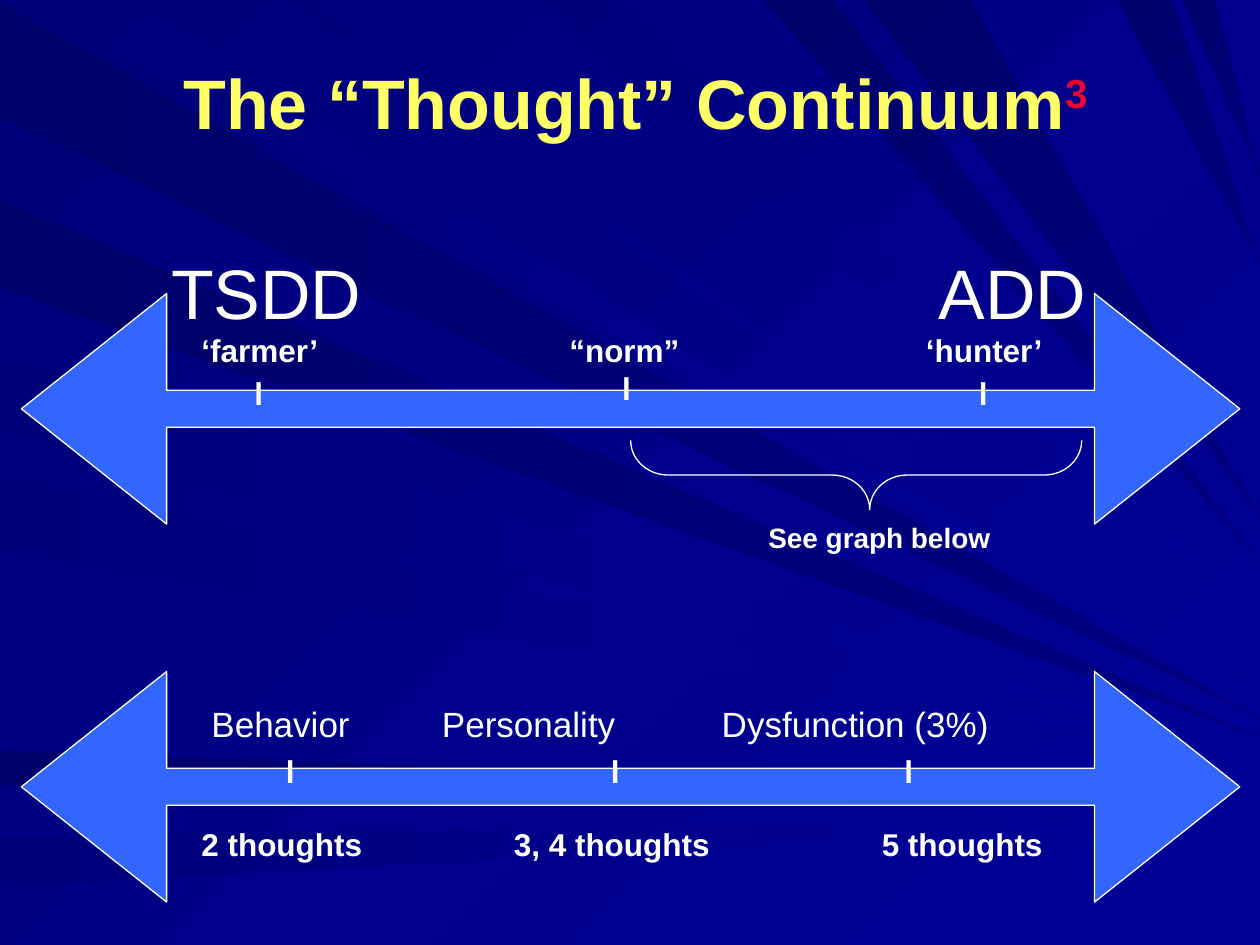
import pptx
import pptx.dml.color
import pptx.enum.shapes
import pptx.enum.text
import pptx.util

Inches = pptx.util.Inches
Pt = pptx.util.Pt
RGBColor = pptx.dml.color.RGBColor
MSO_SHAPE = pptx.enum.shapes.MSO_SHAPE
PP_ALIGN = pptx.enum.text.PP_ALIGN

WHITE = RGBColor(0xFF, 0xFF, 0xFF)
YELLOW = RGBColor(0xFF, 0xFF, 0x66)
RED = RGBColor(0xEB, 0x05, 0x31)
ARROW_BLUE = RGBColor(0x33, 0x66, 0xFF)
NAVY = RGBColor(0x00, 0x00, 0x78)
BLUE = RGBColor(0x00, 0x00, 0x99)
DARK_RAY = (RGBColor(0x00, 0x00, 0x6B), RGBColor(0x00, 0x00, 0x80))
LIGHT_RAY = (RGBColor(0x00, 0x00, 0x7B), BLUE)

LEFT_RAYS = [
    (0.02, 0.93, 5.7, DARK_RAY),
    (1.59, 2.28, 5.85, DARK_RAY),
    (2.8, 3.45, 6.03, LIGHT_RAY),
    (3.74, 4.37, 6.06, LIGHT_RAY),
    (5.96, 6.23, 6.32, DARK_RAY),
    (6.65, 7.04, 6.47, LIGHT_RAY),
]
TOP_RAYS = [
    (0.26, 1.01, 5.63, LIGHT_RAY),
    (2.25, 2.47, 5.5, LIGHT_RAY),
    (4.26, 4.92, 4.93, LIGHT_RAY),
    (6.06, 6.61, 4.46, DARK_RAY),
    (6.86, 7.7, 4.1, DARK_RAY),
    (8.87, 9.3, 2.1, DARK_RAY),
    (9.39, 9.64, 1.4, DARK_RAY),
]


class ContinuumSlide:
    font = "Arial"
    outline = Pt(0.75)

    def __init__(self, presentation):
        self.slide = presentation.slides.add_slide(presentation.slide_layouts[6])
        self.shapes = self.slide.shapes
        self.right_edge = presentation.slide_width

    def gradient(self, fill, colors, angle):
        fill.gradient()
        fill.gradient_angle = (360 - angle) % 360
        for position, (stop, color) in enumerate(zip(fill.gradient_stops, colors)):
            stop.color.rgb = color
            stop.position = position

    def background(self, colors, angle):
        self.gradient(self.slide.background.fill, colors, angle)

    def ray(self, start, end, tip, colors, angle):
        builder = self.shapes.build_freeform(*start)
        builder.add_line_segments([end, (self.right_edge, Inches(tip))], close=True)
        ray = builder.convert_to_shape()
        ray.shadow.inherit = False
        ray.line.fill.background()
        self.gradient(ray.fill, colors, angle)

    def preset(self, kind, left, top, width, height, adjustments, fill=None):
        shape = self.shapes.add_shape(kind, Inches(left), Inches(top), Inches(width), Inches(height))
        shape.shadow.inherit = False
        for index, value in enumerate(adjustments):
            shape.adjustments[index] = value
        if fill is None:
            shape.fill.background()
        else:
            shape.fill.solid()
            shape.fill.fore_color.rgb = fill
        shape.line.color.rgb = WHITE
        shape.line.width = self.outline
        return shape

    def double_arrow(self, top):
        self.preset(MSO_SHAPE.LEFT_RIGHT_ARROW, 0.17, top, 9.67, 1.83, (0.16, 0.63), ARROW_BLUE)

    def brace(self, left, top, width, height):
        brace = self.preset(MSO_SHAPE.LEFT_BRACE, left, top, width, height, (0.54, 0.53))
        brace.rotation = 270

    def label(self, text, left, top, width, height=0.4, size=18, bold=True, color=WHITE):
        box = self.shapes.add_textbox(Inches(left), Inches(top), Inches(width), Inches(height))
        box.text_frame.word_wrap = True
        paragraph = box.text_frame.paragraphs[0]
        paragraph.text = text
        paragraph.font.name = self.font
        paragraph.font.size = Pt(size)
        paragraph.font.bold = bold
        paragraph.font.color.rgb = color
        return paragraph

    def title(self, text, reference):
        heading = self.label(text, 0.42, 0.42, 9.25, 0.77, size=40, color=YELLOW)
        heading.alignment = PP_ALIGN.CENTER
        superscript = heading.add_run()
        superscript.text = reference
        superscript.font.color.rgb = RED
        superscript._r.get_or_add_rPr().set("baseline", "30000")

    def tick(self, left, top):
        self.label("l", left, top, 0.27)


def main():
    presentation = pptx.Presentation()
    presentation.slide_width = Inches(10)
    presentation.slide_height = Inches(7.5)
    continuum = ContinuumSlide(presentation)

    continuum.background((NAVY, BLUE), 45)
    for upper, lower, tip, colors in LEFT_RAYS:
        continuum.ray((0, Inches(upper)), (0, Inches(lower)), tip, colors, 0)
    for near, far, tip, colors in TOP_RAYS:
        continuum.ray((Inches(near), 0), (Inches(far), 0), tip, colors, 45)

    for arrow_top in (5.33, 2.33):
        continuum.double_arrow(arrow_top)
    continuum.title("The “Thought” Continuum", "3")

    for disorder, left in (("TSDD", 1.26), ("ADD", 7.35)):
        continuum.label(disorder, left, 1.93, 1.9, 0.77, size=40, bold=False)
    for kind, left in (("‘farmer’", 1.5), ("“norm”", 4.42), ("‘hunter’", 7.25)):
        continuum.label(kind, left, 2.58, 1.28)
    for left, top in ((1.92, 2.92), (4.84, 2.88), (7.67, 2.92)):
        continuum.tick(left, top)

    continuum.brace(6.52, 1.98, 0.55, 3.58)
    continuum.label("See graph below", 6, 4.08, 2.1, 0.37, size=16)

    for stage, left in (("Behavior", 1.58), ("Personality", 3.41), ("Dysfunction (3%)", 5.63)):
        continuum.label(stage, left, 5.53, 2.5, size=20, bold=False)
    for left in (2.17, 4.75, 7.08):
        continuum.tick(left, 5.92)
    for thoughts, left in (("2 thoughts", 1.5), ("3, 4 thoughts", 3.98), ("5 thoughts", 6.9)):
        continuum.label(thoughts, left, 6.5, 1.9)

    presentation.save("out.pptx")


if __name__ == "__main__":
    main()
